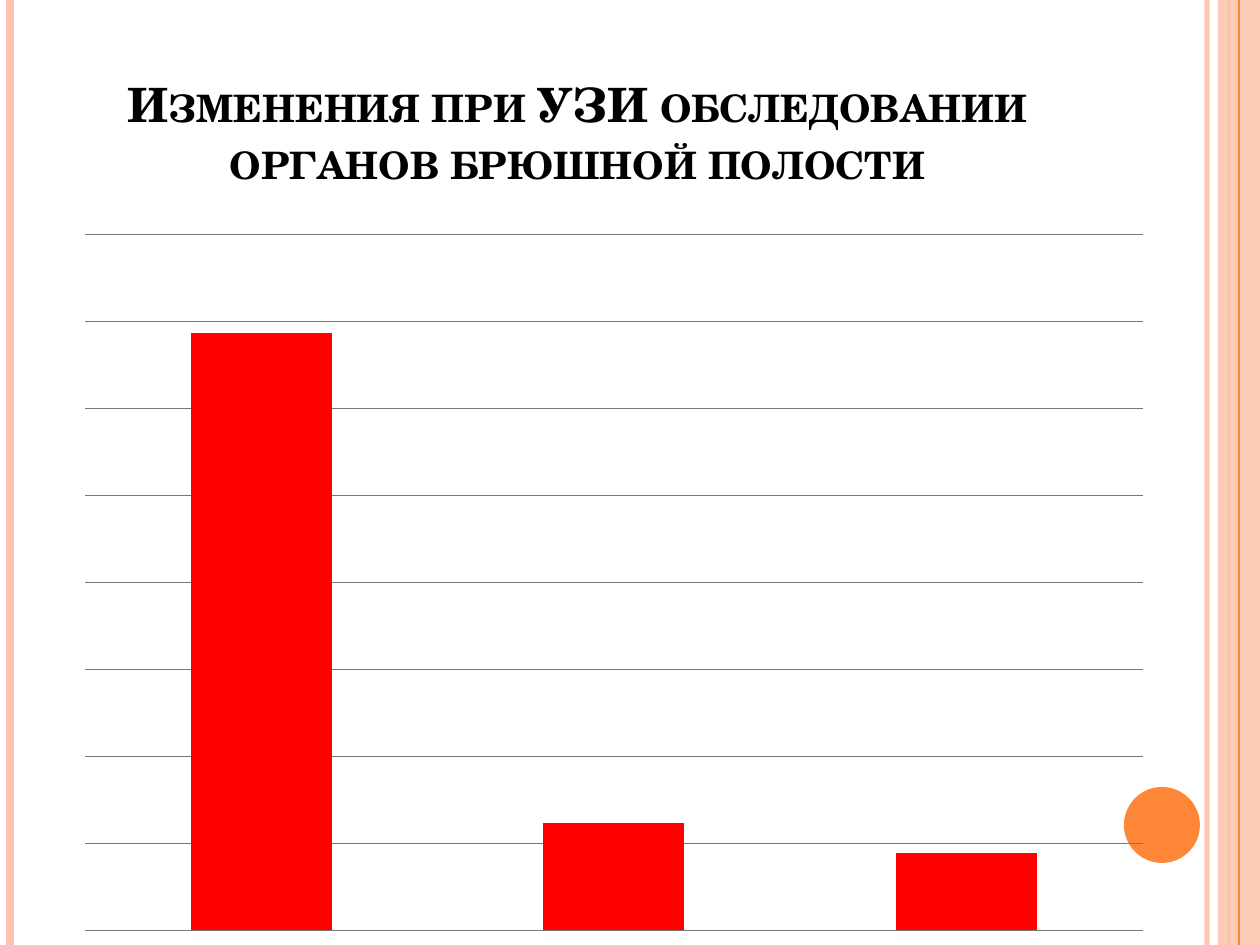
from pptx import Presentation
from pptx.chart.data import CategoryChartData as Data
from pptx.dml.color import RGBColor
from pptx.enum.chart import XL_CHART_TYPE as Kind
from pptx.enum.shapes import MSO_CONNECTOR as Link, MSO_SHAPE as Shape
from pptx.enum.text import MSO_ANCHOR as Anchor, PP_ALIGN as Align
from pptx.oxml import parse_xml
from pptx.oxml.ns import nsdecls, qn
from pptx.util import Emu, Pt

FONT = "TeX Gyre Schola"
PINK, ORANGE = "FEC3AE", "FE8637"
WIDE, HIGH = 1260, 945


def px(n):
    """Turn pixels into EMU."""
    return Emu(round(n * 914400 / 126))


def color(text):
    """Turn a hex string into a colour."""
    return RGBColor.from_string(text)


def fade(fill, share):
    """Give a solid fill an opacity in percent."""
    tone = fill.find(".//" + qn("a:srgbClr"))
    tone.append(parse_xml(f'<a:alpha {nsdecls("a")} val="{share * 1000}"/>'))


def stripe(slide, x, tone, width, share=100):
    """Draw a line down the whole slide."""
    line = slide.shapes.add_connector(Link.STRAIGHT, px(x), 0, px(x), px(HIGH))
    line.line.color.rgb = color(tone)
    line.line.width = Pt(width)
    props = line._element.spPr
    if share < 100:
        fade(props, share)
    props.append(parse_xml(f'<a:effectLst {nsdecls("a")}/>'))


def block(slide, kind, box, tone, share=100):
    """Draw a plain filled shape."""
    shape = slide.shapes.add_shape(kind, *map(px, box))
    shape.shadow.inherit = False
    shape.fill.solid()
    shape.fill.fore_color.rgb = color(tone)
    shape.line.fill.background()
    if share < 100:
        fade(shape._element.spPr, share)


def decor(slide):
    """Draw the edge stripes and the disc."""
    stripe(slide, 1207, PINK, 3, 93)
    stripe(slide, 10, PINK, 4.5)
    stripe(slide, 1229, ORANGE, 1.5)
    block(slide, Shape.RECTANGLE, (1218, 0, 42, HIGH), PINK, 87)
    stripe(slide, 1239, ORANGE, 0.75)
    block(slide, Shape.OVAL, (1124, 787, 76, 76), ORANGE)


def heading(slide, box, text):
    """Place and format the title."""
    title = slide.shapes.title
    title.left, title.top, title.width, title.height = map(px, box)
    frame = title.text_frame
    frame.word_wrap = True
    frame.vertical_anchor = Anchor.BOTTOM
    para = frame.paragraphs[0]
    para.alignment = Align.CENTER
    run = para.add_run()
    run.text = text
    font = run.font
    font.name, font.size, font.bold = FONT, Pt(27), True
    font.color.rgb = color("000000")
    font._element.set("cap", "small")


def bars(slide, box, vals):
    """Place the column chart with hidden axes."""
    data = Data(number_format="General")
    data.categories = [str(n + 1) for n in range(len(vals))]
    data.add_series("Series 1", vals)
    chart = slide.shapes.add_chart(Kind.COLUMN_STACKED, *map(px, box), data).chart
    chart.has_legend = chart.has_title = False
    chart.font.name, chart.font.size = FONT, Pt(10)
    chart.font.color.rgb = color("000000")
    plot = chart.plots[0]
    plot.gap_width, plot.overlap = 150, 100
    plot.vary_by_categories = False
    fill = plot.series[0].format.fill
    fill.solid()
    fill.fore_color.rgb = color("FF0000")
    chart.category_axis.visible = False
    axis = chart.value_axis
    axis.visible = False
    axis.minimum_scale, axis.major_unit = 0, 14.56
    axis.maximum_scale = 8 * axis.major_unit
    axis.tick_labels.number_format = "0.00%"
    axis.tick_labels.number_format_is_linked = False
    axis.has_major_gridlines = True
    grid = axis.major_gridlines.format.line
    grid.color.rgb = color("787878")
    grid.width = Pt(0.75)
    area = chart._chartSpace.chart.plotArea
    for old in area.findall(qn("c:layout")):
        area.remove(old)
    sides = "".join(f'<c:{k} val="{v}"/>' for k, v in
                    (("x", 0.02), ("y", 0.02), ("w", 0.96), ("h", 0.96)))
    area.insert(0, parse_xml(
        f'<c:layout {nsdecls("c")}><c:manualLayout><c:layoutTarget val="inner"/>'
        f'<c:xMode val="edge"/><c:yMode val="edge"/>{sides}'
        '</c:manualLayout></c:layout>'))


def main():
    """Build and save the slide."""
    deck = Presentation()
    deck.slide_width, deck.slide_height = px(WIDE), px(HIGH)
    slide = deck.slides.add_slide(deck.slide_layouts[5])
    decor(slide)
    heading(slide, (63, 38, 1029, 157),
            "Изменения при УЗИ обследовании органов брюшной полости")
    bars(slide, (63, 220, 1102, 725), (100, 18, 13))
    deck.save("out.pptx")


if __name__ == "__main__":
    main()
